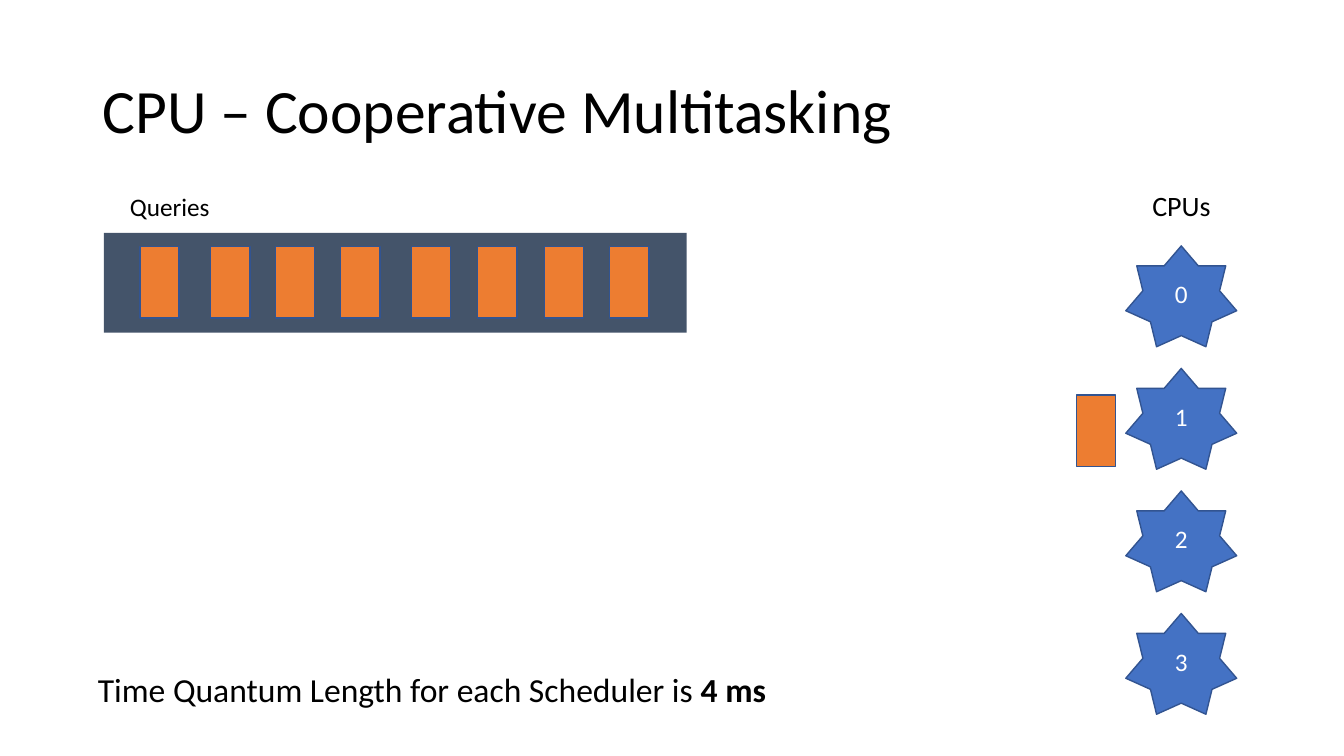
from pptx import Presentation
from pptx.dml.color import RGBColor
from pptx.enum.shapes import MSO_SHAPE
from pptx.enum.text import MSO_ANCHOR, PP_ALIGN
from pptx.util import Pt

COLORS = {
    "black": "000000",
    "white": "FFFFFF",
    "slate": "44546A",
    "orange": "ED7D31",
    "blue": "4472C4",
    "edge": "325491",
}


def write(frame, text, size=18, color="black", align=PP_ALIGN.LEFT,
          anchor=MSO_ANCHOR.TOP, bold="", spacing=1.0):
    frame.word_wrap = True
    frame.vertical_anchor = anchor
    para = frame.paragraphs[0]
    para.alignment = align
    para.line_spacing = spacing
    for part, heavy in ((text, False), (bold, True)):
        if part:
            run = para.add_run()
            run.text = part
            run.font.name = "Calibri"
            run.font.size = Pt(size)
            run.font.bold = heavy
            run.font.color.rgb = RGBColor.from_string(COLORS[color])


def draw(kind, left, top, width, height, fill, line=None):
    shape = slide.shapes.add_shape(kind, Pt(left), Pt(top), Pt(width), Pt(height))
    shape.shadow.inherit = False
    shape.fill.solid()
    shape.fill.fore_color.rgb = RGBColor.from_string(COLORS[fill])
    if line:
        shape.line.color.rgb = RGBColor.from_string(COLORS[line])
        shape.line.width = Pt(1)
    else:
        shape.line.fill.background()
    return shape


deck = Presentation()
deck.slide_width, deck.slide_height = Pt(960), Pt(540)
slide = deck.slides.add_slide(deck.slide_layouts[5])

title = slide.shapes.title
title.left, title.top, title.width, title.height = Pt(66), Pt(28.8), Pt(828), Pt(104.4)
write(title.text_frame, "CPU – Cooperative Multitasking", size=44,
      anchor=MSO_ANCHOR.MIDDLE, spacing=0.9)

draw(MSO_SHAPE.RECTANGLE, 74.2, 166.3, 416.2, 71.3, "slate")

tasks = [(left, 176) for left in (100, 150.5, 196.6, 243.4, 293.8, 341.3, 388.8, 435.6)]
tasks.append((769, 282.2))
for left, top in tasks:
    draw(MSO_SHAPE.RECTANGLE, left, top, 28, 51.1, "orange", "edge")

for index in range(4):
    star = draw(MSO_SHAPE.STAR_7_POINT, 804.2, 175.7 + 87.5 * index, 79.2, 72, "blue", "edge")
    write(star.text_frame, str(index), color="white",
          align=PP_ALIGN.CENTER, anchor=MSO_ANCHOR.MIDDLE)

labels = [
    ((783.4, 131, 121, 31.5), "CPUs", {"size": 20, "align": PP_ALIGN.CENTER}),
    ((85.7, 133.2, 154.8, 29), "Queries", {}),
    ((29.5, 474.5, 558, 36), "Time Quantum Length for each Scheduler is ",
     {"size": 24, "align": PP_ALIGN.CENTER, "bold": "4 ms"}),
]
for area, text, style in labels:
    box = slide.shapes.add_textbox(*map(Pt, area))
    write(box.text_frame, text, **style)

deck.save("out.pptx")
